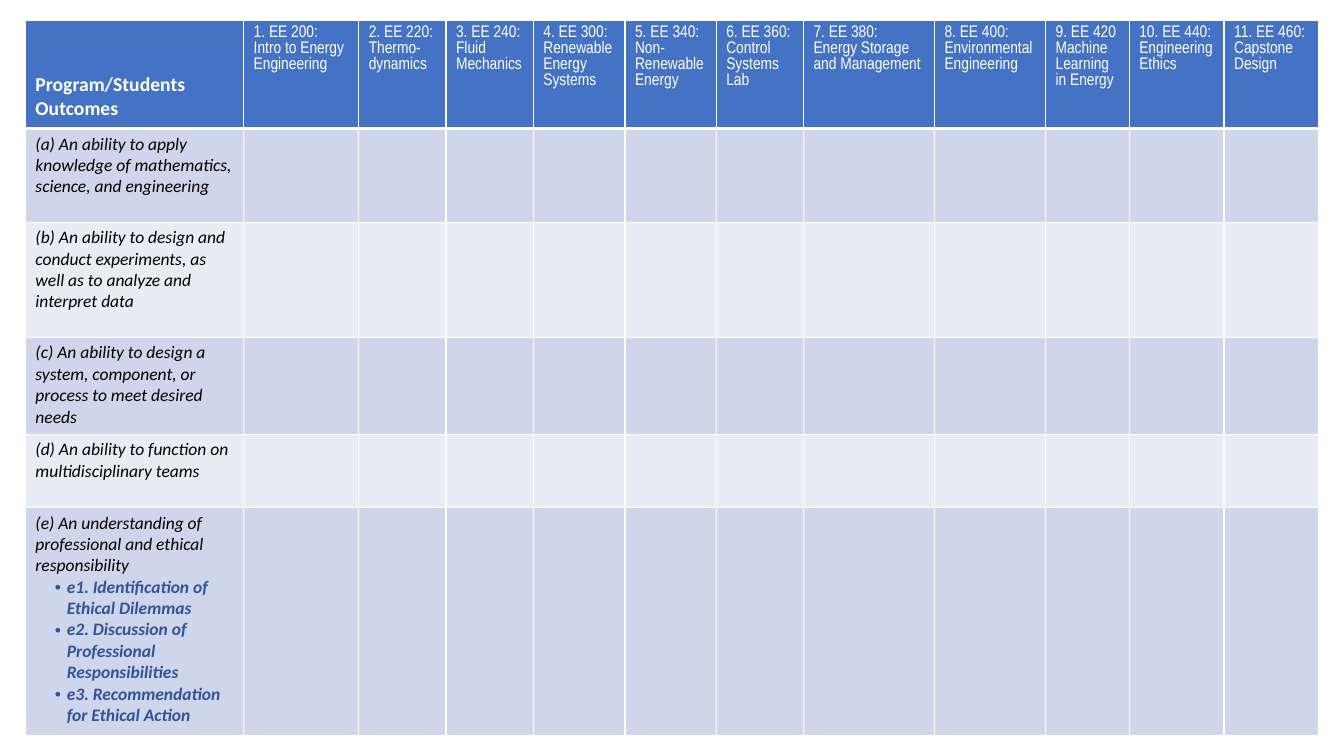
from lxml import etree
from pptx import Presentation
from pptx.dml.color import RGBColor
from pptx.enum.text import MSO_ANCHOR
from pptx.oxml.ns import qn
from pptx.util import Cm, Pt

BOTTOM = MSO_ANCHOR.BOTTOM

COLORS = {
    "head": "4472C4",
    "odd": "CFD5EA",
    "even": "E9EBF5",
    "white": "FFFFFF",
    "black": "000000",
    "blue": "2F5597",
}

TITLE = {"name": "Calibri", "size": Pt(14), "bold": True, "italic": False}
COURSE = {"name": "Arial Narrow", "size": Pt(12), "bold": False, "italic": False}
GOAL = {"name": "Calibri", "size": Pt(12.5), "bold": False, "italic": True}
POINT = GOAL | {"bold": True}

WIDTHS = [5.5, 2.9, 2.2, 2.2, 2.31, 2.3, 2.2, 3.3, 2.8, 2.11, 2.39, 2.39]
HEIGHTS = [2.72, 2.36, 2.9, 2.44, 1.85, 5.74]

COURSES = [
    "1. EE 200: Intro to Energy Engineering",
    "2. EE 220: Thermo-dynamics",
    "3. EE 240: Fluid Mechanics",
    "4. EE 300: Renewable Energy Systems",
    "5. EE 340: Non-Renewable Energy",
    "6. EE 360: Control Systems Lab",
    "7. EE 380: Energy Storage and Management",
    "8. EE 400: Environmental Engineering",
    "9. EE 420 Machine Learning in Energy",
    "10. EE 440: Engineering Ethics",
    "11. EE 460: Capstone Design",
]
GOALS = [
    "(a) An ability to apply knowledge of mathematics, science, and engineering",
    "(b) An ability to design and conduct experiments, as well as to analyze "
    "and interpret data",
    "(c) An ability to design a system, component, or process to meet desired needs",
    "(d) An ability to function on multidisciplinary teams",
    "(e) An understanding of professional and ethical responsibility",
]
POINTS = [
    "e1. Identification of Ethical Dilemmas",
    "e2. Discussion of Professional Responsibilities",
    "e3. Recommendation for Ethical Action",
]


def write(para, text, style, color):
    run = para.add_run()
    run.text = text
    for key, value in style.items():
        setattr(run.font, key, value)
    run.font.color.rgb = RGBColor.from_string(COLORS[color])


def add_point(cell, text):
    para = cell.text_frame.add_paragraph()
    props = para._p.get_or_add_pPr()
    props.set("marL", str(Cm(0.79)))
    props.set("indent", str(Cm(-0.3)))
    etree.SubElement(props, qn("a:buFont"), typeface="Arial")
    etree.SubElement(props, qn("a:buChar"), char="•")
    write(para, text, POINT, "blue")


def add_edges(cell, row):
    props = cell._tc.get_or_add_tcPr()
    # The rule below the header row is heavier
    heavy = {0: "lnB", 1: "lnT"}.get(row)
    for side in ("lnL", "lnR", "lnT", "lnB"):
        width = Pt(3 if side == heavy else 1)
        line = etree.SubElement(props, qn(f"a:{side}"), w=str(width))
        fill = etree.SubElement(line, qn("a:solidFill"))
        etree.SubElement(fill, qn("a:srgbClr"), val=COLORS["white"])


def paint(cell, row):
    add_edges(cell, row)
    color = "head" if row == 0 else "odd" if row % 2 else "even"
    cell.fill.solid()
    cell.fill.fore_color.rgb = RGBColor.from_string(COLORS[color])


def add_grid(slide):
    frame = slide.shapes.add_table(
        len(HEIGHTS), len(WIDTHS), Cm(0.64), Cm(0.52),
        Cm(sum(WIDTHS)), Cm(sum(HEIGHTS)))
    table = frame.table
    for col, width in zip(table.columns, WIDTHS):
        col.width = Cm(width)
    for row, height in zip(table.rows, HEIGHTS):
        row.height = Cm(height)
    for row in range(len(HEIGHTS)):
        for col in range(len(WIDTHS)):
            paint(table.cell(row, col), row)
    return table


def fill_head(table):
    corner = table.cell(0, 0)
    corner.vertical_anchor = BOTTOM
    corner.margin_bottom = Cm(0.2)
    write(corner.text_frame.paragraphs[0], "Program/Students Outcomes", TITLE, "white")
    for col, text in enumerate(COURSES, 1):
        write(table.cell(0, col).text_frame.paragraphs[0], text, COURSE, "white")


def fill_goals(table):
    for row, text in enumerate(GOALS, 1):
        write(table.cell(row, 0).text_frame.paragraphs[0], text, GOAL, "black")
    for text in POINTS:
        add_point(table.cell(len(GOALS), 0), text)


def main():
    deck = Presentation()
    deck.slide_width, deck.slide_height = Cm(33.87), Cm(19.05)
    slide = deck.slides.add_slide(deck.slide_layouts[6])

    # Course matrix: courses across, outcomes down
    table = add_grid(slide)
    fill_head(table)
    fill_goals(table)
    deck.save("out.pptx")


if __name__ == "__main__":
    main()
